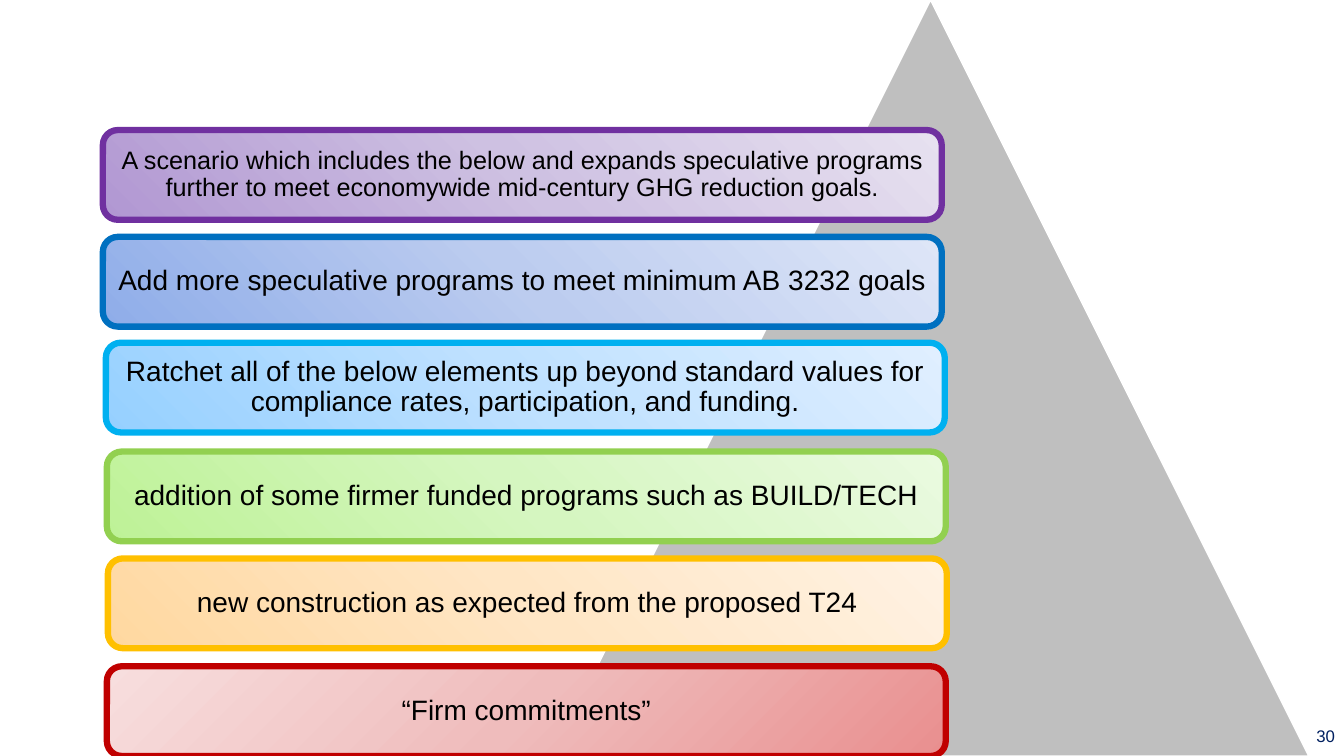
from pptx import Presentation
from pptx.dml.color import RGBColor as RGB
from pptx.enum.shapes import MSO_SHAPE as Shape
from pptx.enum.text import MSO_ANCHOR as Anchor, PP_ALIGN as Align
from pptx.oxml import parse_xml
from pptx.oxml.ns import nsdecls
from pptx.util import Inches, Pt

COLORS = {
    "gray": "BFBFBF", "white": "FFFFFF", "black": "000000", "navy": "002060",
    "purple": "7030A0", "blue": "0070C0", "sky": "00B0F0",
    "green": "92D050", "gold": "FFC000", "red": "C00000",
}
FADES = {
    "purple": ("B197D2", "CEC1E2", "E7E1F0"),
    "blue": ("8FADE9", "BCCCEF", "DEE6F7"),
    "sky": ("96D0FF", "BFE1FF", "E0EFFF"),
    "green": ("BEF297", "D5F6C0", "EAFAE0"),
    "gold": ("FFD8A0", "FFE6C5", "FFF2E3"),
    "red": ("E98F8F", "EFBCBC", "F7DEDE"),
}
LEFT = 'l="0" t="100000" r="100000" b="0"'
RIGHT = 'l="100000" t="100000" r="0" b="0"'
WIDTH, HEIGHT = 8.32, 0.89
LEVELS = [
    (1.02, 1.29, "purple", LEFT, 18,
     "A scenario which includes the below and expands speculative programs "
     "further to meet economywide mid-century GHG reduction goals."),
    (1.02, 2.35, "blue", LEFT, 20,
     "Add more speculative programs to meet minimum AB 3232 goals"),
    (1.05, 3.4, "sky", LEFT, 20,
     "Ratchet all of the below elements up beyond standard values for "
     "compliance rates, participation, and funding."),
    (1.06, 4.48, "green", LEFT, 20,
     "addition of some firmer funded programs such as BUILD/TECH"),
    (1.07, 5.54, "gold", LEFT, 20,
     "new construction as expected from the proposed T24"),
    (1.06, 6.61, "red", RIGHT, 20, "“Firm commitments”"),
]


def color(name):
    """Return the named colour."""
    return RGB.from_string(COLORS[name])


def write(frame, text, size, tint, align):
    """Write one paragraph, centred vertically in its frame."""
    frame.word_wrap = True
    frame.vertical_anchor = Anchor.MIDDLE
    para = frame.paragraphs[0]
    para.text = text
    para.alignment = align
    para.font.name = "Arial"
    para.font.size = Pt(size)
    para.font.color.rgb = color(tint)
    return para


def add_block(slide, kind, box, line, weight):
    """Add an outlined shape without a shadow."""
    block = slide.shapes.add_shape(kind, *map(Inches, box))
    block.shadow.inherit = False
    block.line.color.rgb = color(line)
    block.line.width = Pt(weight)
    return block


def fade(block, stops, focus):
    """Fill a shape with a gradient that spreads from one corner."""
    marks = "".join(
        f'<a:gs pos="{i * 50000}"><a:srgbClr val="{tone}"/></a:gs>'
        for i, tone in enumerate(stops))
    fill = parse_xml(
        f'<a:gradFill {nsdecls("a")} rotWithShape="1"><a:gsLst>{marks}</a:gsLst>'
        f'<a:path path="circle"><a:fillToRect {focus}/></a:path></a:gradFill>')
    block._element.spPr.prstGeom.addnext(fill)


def add_peak(slide, box):
    """Add the gray triangle behind the levels."""
    peak = add_block(slide, Shape.ISOSCELES_TRIANGLE, box, "white", 1)
    peak.fill.solid()
    peak.fill.fore_color.rgb = color("gray")


def add_level(slide, box, tint, focus, size, text):
    """Add one rounded level with its label."""
    level = add_block(slide, Shape.ROUNDED_RECTANGLE, box, tint, 4.5)
    fade(level, FADES[tint], focus)
    frame = level.text_frame
    inset = Inches(0.07 if size < 20 else 0.08)
    frame.margin_left = frame.margin_right = inset
    frame.margin_top = frame.margin_bottom = inset
    para = write(frame, text, size, "black", Align.CENTER)
    para.line_spacing = 0.9


def add_page(slide, box, text):
    """Add the page number."""
    page = slide.shapes.add_textbox(*map(Inches, box))
    write(page.text_frame, text, 12, "navy", Align.RIGHT)


def main():
    """Build and save the slide."""
    deck = Presentation()
    deck.slide_width, deck.slide_height = Inches(13.33), Inches(7.5)
    slide = deck.slides.add_slide(deck.slide_layouts[6])
    add_page(slide, (11.41, 7.1, 1.93, 0.4), "30")
    add_peak(slide, (5.48, 0, 7.5, 7.5))
    for left, top, *rest in LEVELS:
        add_level(slide, (left, top, WIDTH, HEIGHT), *rest)
    deck.save("out.pptx")


if __name__ == "__main__":
    main()
